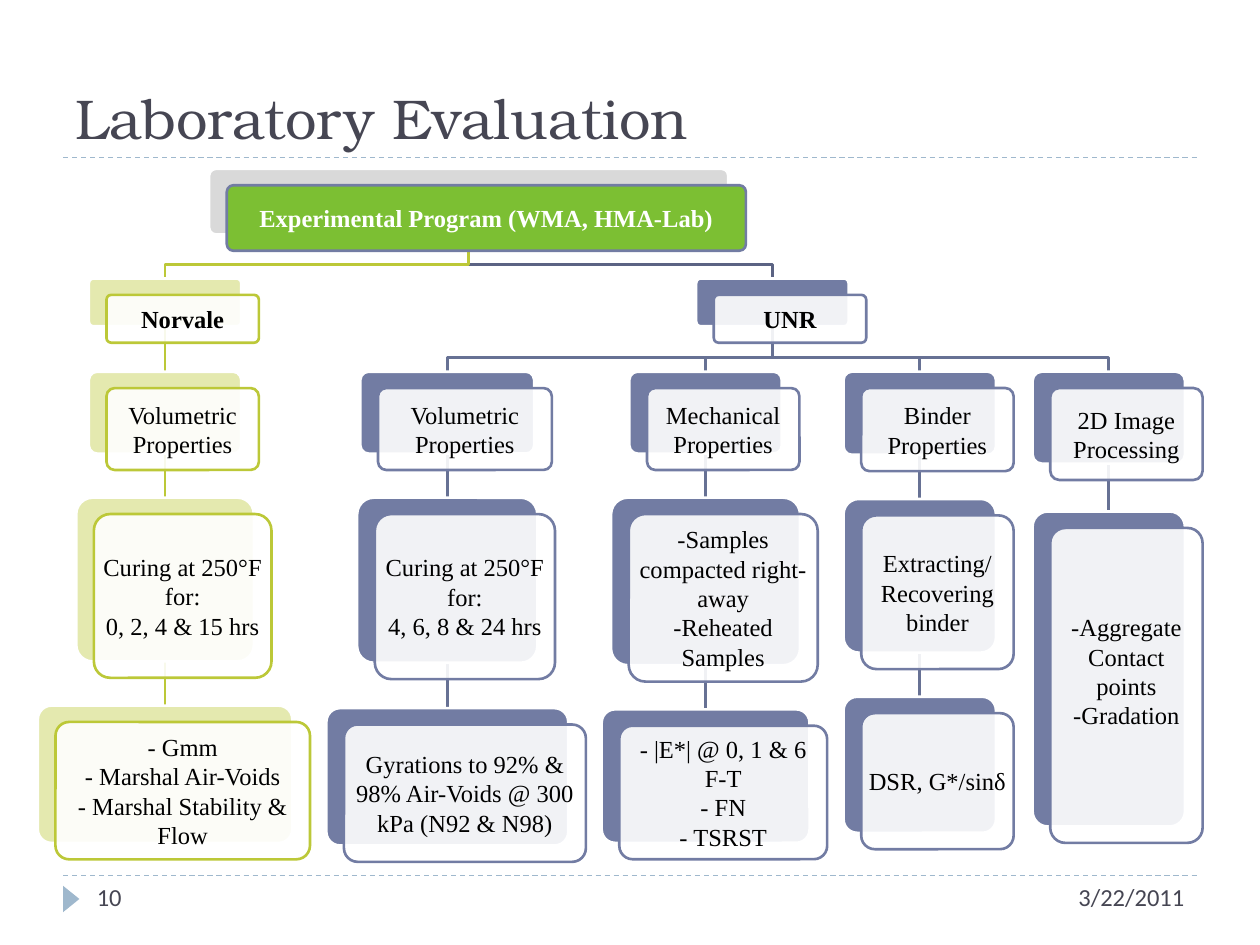
import pptx
import pptx.dml.color
import pptx.enum.dml
import pptx.enum.shapes
import pptx.enum.text
import pptx.oxml.ns
import pptx.util
from lxml import etree

PX = 9144  # EMU per px, 100 px to the inch
OFFSET_X, OFFSET_Y = 14, 13  # front card against its back plate
INSET = 6
CORNER = 0.1
LINE_HEIGHT = 23

COLORS = {
    "ink": "464653", "rule": "9FB8CD", "white": "FFFFFF", "black": "000000",
    "root": "7CBF33", "root_plate": "D9D9D9",
    "lime": "BCC838", "lime_plate": "E4E9AF",
    "slate": "727CA3", "slate_link": "677194", "dark_link": "5B6383",
}
LIME = {"plate": "lime_plate", "edge": "lime", "link": "lime"}
SLATE = {"plate": "slate", "edge": "slate", "link": "slate_link"}
ROOT = {"plate": "root_plate", "edge": "slate", "face": "root", "text": "white"}

SHAPES = pptx.enum.shapes.MSO_SHAPE
ALIGN = pptx.enum.text.PP_ALIGN
ANCHOR = pptx.enum.text.MSO_ANCHOR

# Each column: centre, then (top, width, height, text) from the top down
CONTRACTOR_COLUMN = (131, [
    (295, 121, 65, "Volumetric Properties"),
    (395, 141, 130, "Curing at 250°F for:\n0, 2, 4 & 15 hrs"),
    (560, 202, 109, "- Gmm\n- Marshal Air-Voids\n- Marshal Stability & Flow"),
])
UNIVERSITY_COLUMNS = [
    (355, [
        (295, 138, 65, "Volumetric Properties"),
        (395, 143, 131, "Curing at 250°F for:\n4, 6, 8 & 24 hrs"),
        (562, 192, 109, "Gyrations to 92% & 98% Air-Voids @ 300 kPa (N92 & N98)"),
    ]),
    (560, [
        (295, 121, 65, "Mechanical Properties"),
        (395, 150, 133, "-Samples compacted right-away\n-Reheated Samples"),
        (563, 165, 106, "- |E*| @ 0, 1 & 6 F-T\n- FN\n- TSRST"),
    ]),
    (730, [
        (295, 121, 66, "Binder Properties"),
        (396, 121, 122, "Extracting/ Recovering binder"),
        (553, 121, 108, "DSR, G*/sinδ"),
    ]),
    (880, [
        (295, 121, 73, "2D Image Processing"),
        (406, 121, 250, "-Aggregate Contact points\n-Gradation"),
    ]),
]


def px(value):
    return pptx.util.Emu(round(value * PX))


def rgb(name):
    return pptx.dml.color.RGBColor.from_string(COLORS[name])


def set_line(item, color, width):
    item.line.color.rgb = rgb(color)
    item.line.width = pptx.util.Pt(width)


def format_text(frame, font, size, color, align, bold=False):
    for para in frame.paragraphs:
        para.alignment = align
        for span in para.runs:
            span.font.name = font
            span.font.size = pptx.util.Pt(size)
            span.font.bold = bold
            span.font.color.rgb = rgb(color)


def add_straight(page, x1, y1, x2, y2, color, width):
    line = page.shapes.add_connector(
        pptx.enum.shapes.MSO_CONNECTOR.STRAIGHT, px(x1), px(y1), px(x2), px(y2))
    set_line(line, color, width)
    etree.SubElement(line._element.spPr, pptx.oxml.ns.qn("a:effectLst"))
    return line


def send_to_back(page, item):
    tree = page.shapes._spTree
    tree.remove(item._element)
    tree.insert(2, item._element)


def add_rounded(page, left, top, width, height, fill, line):
    box = page.shapes.add_shape(
        SHAPES.ROUNDED_RECTANGLE, px(left), px(top), px(width), px(height))
    box.adjustments[0] = CORNER
    box.shadow.inherit = False
    box.fill.solid()
    box.fill.fore_color.rgb = rgb(fill)
    set_line(box, line, 1.5)
    return box


def add_card(page, center, top, width, height, text, theme, bold=False, extra_bottom=0):
    """Place a back plate and its offset text card; return the plate."""
    left = center - width / 2
    plate = add_rounded(page, left, top, width, height, theme["plate"], "white")
    card = add_rounded(page, left + OFFSET_X, top + OFFSET_Y, width, height,
                       theme.get("face", "white"), theme["edge"])
    if "face" not in theme:
        tint = card._element.spPr.find(".//" + pptx.oxml.ns.qn("a:srgbClr"))
        etree.SubElement(tint, pptx.oxml.ns.qn("a:alpha"), val="90000")

    # The rounded corners already push the text in by part of their radius
    margin = px(max(0, INSET - 0.29 * CORNER * min(width, height)))
    frame = card.text_frame
    frame.word_wrap = True
    frame.vertical_anchor = ANCHOR.MIDDLE
    frame.margin_left = frame.margin_right = frame.margin_top = margin
    frame.margin_bottom = margin + px(extra_bottom)
    frame.text = text
    format_text(frame, "Times New Roman", 14, theme.get("text", "black"), ALIGN.CENTER, bold)
    return plate


def link_down(page, upper, lower, color):
    link = add_straight(page, 0, 0, 0, 0, color, 1.5)
    link.begin_connect(upper, 2)
    link.end_connect(lower, 0)
    send_to_back(page, link)


def link_elbow(page, upper, lower, color):
    start_x, end_x = upper.left + upper.width // 2, lower.left + lower.width // 2
    bend = lower.top - px(11)
    builder = page.shapes.build_freeform(start_x, upper.top + upper.height)
    builder.add_line_segments(
        [(start_x, bend), (end_x, bend), (end_x, lower.top)], close=False)
    elbow = builder.convert_to_shape()
    elbow.shadow.inherit = False
    elbow.fill.background()
    set_line(elbow, color, 1.5)
    send_to_back(page, elbow)


def add_column(page, center, cards, theme):
    """Stack linked cards below one another; return the top plate."""
    plates = []
    for top, width, height, text in cards:
        spare = LINE_HEIGHT if height > 200 else 0
        plates.append(add_card(page, center, top, width, height, text, theme,
                               extra_bottom=spare))
    for upper, lower in zip(plates, plates[1:]):
        link_down(page, upper, lower, theme["link"])
    return plates[0]


def add_chart_tree(page):
    root = add_card(page, 372, 134, 412, 52, "Experimental Program (WMA, HMA-Lab)", ROOT, True)
    contractor = add_card(page, 131, 221, 121, 38, "Norvale", LIME, True)
    university = add_card(page, 613, 221, 121, 38, "UNR", SLATE, True)
    link_elbow(page, root, contractor, "lime")
    link_elbow(page, root, university, "dark_link")
    link_down(page, contractor, add_column(page, *CONTRACTOR_COLUMN, LIME), "lime")
    for center, cards in UNIVERSITY_COLUMNS:
        link_elbow(page, university, add_column(page, center, cards, SLATE), "slate_link")


def add_title(page, left, top, width, height):
    title = page.shapes.title
    title.left, title.top, title.width, title.height = map(px, (left, top, width, height))
    frame = title.text_frame
    frame.auto_size = pptx.enum.text.MSO_AUTO_SIZE.NONE
    frame.vertical_anchor = ANCHOR.BOTTOM
    frame.text = "Laboratory Evaluation"
    format_text(frame, "TeX Gyre Bonum", 32, "ink", ALIGN.LEFT)


def add_rule(page, y):
    rule = add_straight(page, 50, y, 950, y, "rule", 0.75)
    rule.line.dash_style = pptx.enum.dml.MSO_LINE.DASH


def add_footer(page, top):
    marker = page.shapes.add_shape(
        SHAPES.ISOSCELES_TRIANGLE, px(46), px(top + 12), px(21), px(13))
    marker.rotation = 90
    marker.shadow.inherit = False
    marker.fill.solid()
    marker.fill.fore_color.rgb = rgb("rule")
    marker.line.fill.background()
    for left, width, text, align in ((67, 217, "10", ALIGN.LEFT),
                                     (700, 250, "3/22/2011", ALIGN.RIGHT)):
        box = page.shapes.add_textbox(px(left), px(top), px(width), px(40))
        box.text_frame.word_wrap = True
        box.text_frame.text = text
        format_text(box.text_frame, "Calibri", 14, "ink", align)


def main():
    deck = pptx.Presentation()
    deck.slide_width, deck.slide_height = px(1000), px(750)
    page = deck.slides.add_slide(deck.slide_layouts[5])
    add_title(page, 50, 17, 900, 108)
    add_chart_tree(page)
    for y in (125, 695):
        add_rule(page, y)
    add_footer(page, 695)
    deck.save("out.pptx")


if __name__ == "__main__":
    main()
